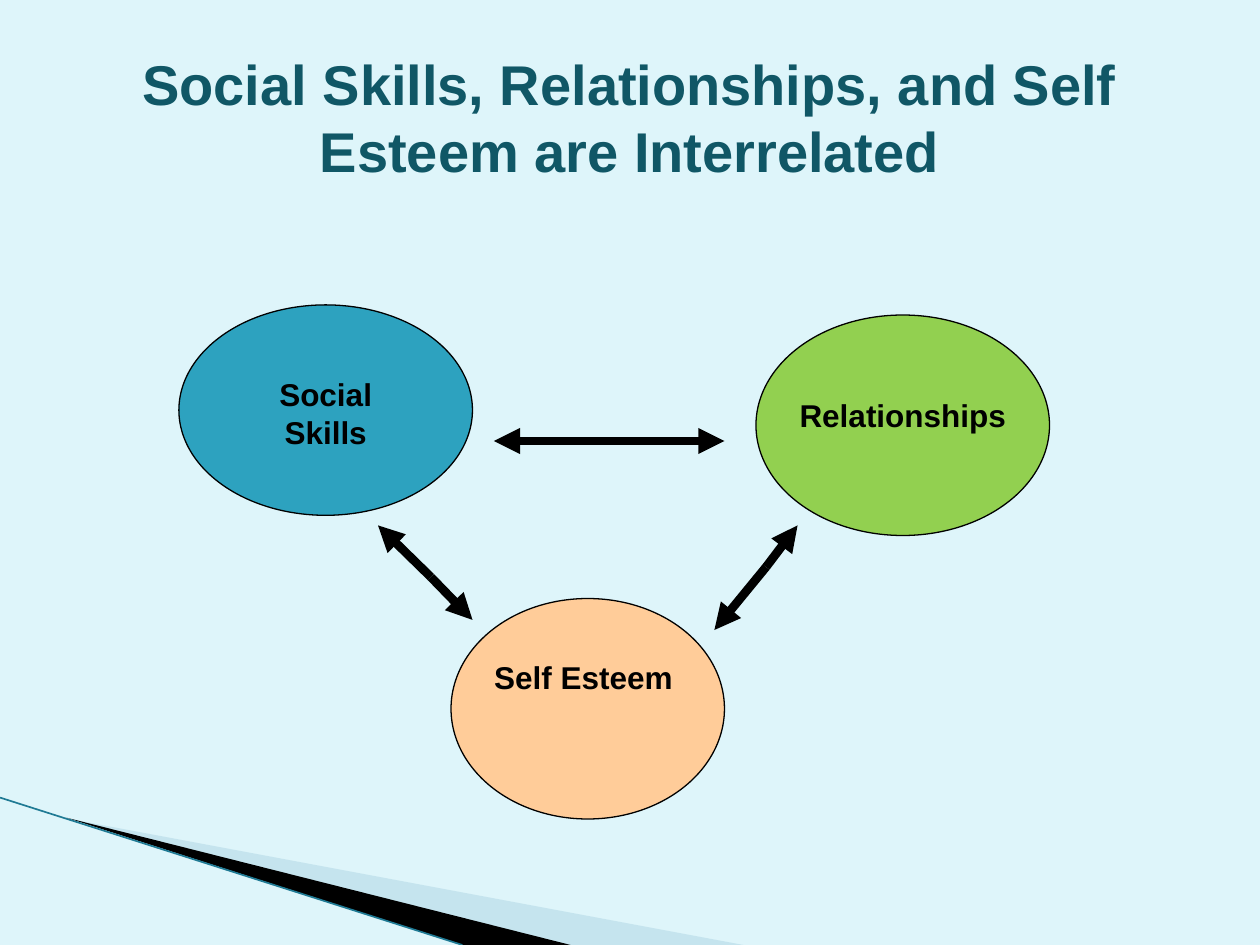
from typing import NamedTuple

import pptx
import pptx.dml.color
import pptx.enum.shapes
import pptx.enum.text
import pptx.oxml.ns
import pptx.oxml.xmlchemy
import pptx.util
from pptx.util import Inches

Point = tuple[float, float]
Box = tuple[float, float, float, float]


class Concept(NamedTuple):
    lines: list[str]
    fill: str
    oval: Box
    label: Box


class Link(NamedTuple):
    middle: Point
    ends: tuple[Point, Point]


CONCEPTS = [
    Concept(["Social", "Skills"], "2DA2BF", (1.42, 2.42, 2.33, 1.67), (1.92, 2.92, 1.33, 0.71)),
    Concept(["Relationships"], "92D050", (6, 2.5, 2.33, 1.75), (6, 3.09, 2.33, 0.4)),
    Concept(["Self Esteem"], "FFCC99", (3.58, 4.75, 2.17, 1.75), (3.67, 5.17, 1.92, 0.4)),
]
LINKS = [
    Link((3.42, 4.58), ((3.75, 4.92), (3, 4.17))),
    Link((4.58, 3.5), ((5.75, 3.5), (3.92, 3.5))),
    Link((6.08, 4.5), ((5.67, 5), (6.33, 4.17))),
]


def color(value: str) -> pptx.dml.color.RGBColor:
    return pptx.dml.color.RGBColor.from_string(value)


def add_xml(parent, tag: str, **attributes: str) -> None:
    child = pptx.oxml.xmlchemy.OxmlElement(tag)
    for name, value in attributes.items():
        child.set(name, value)
    parent.append(child)


def add_text(s, box: Box, lines: list[str], size: float, ink: str) -> None:
    sp = s.shapes.add_textbox(*map(Inches, box))
    tf = sp.text_frame
    tf.word_wrap = True
    tf.vertical_anchor = pptx.enum.text.MSO_ANCHOR.MIDDLE
    tf.text = "\n".join(lines)
    for p in tf.paragraphs:
        p.alignment = pptx.enum.text.PP_ALIGN.CENTER
        for r in p.runs:
            r.font.name = "Arial"
            r.font.size = pptx.util.Pt(size)
            r.font.bold = True
            r.font.color.rgb = color(ink)


def add_oval(s, concept: Concept) -> None:
    sp = s.shapes.add_shape(pptx.enum.shapes.MSO_SHAPE.OVAL, *map(Inches, concept.oval))
    sp.shadow.inherit = False
    sp.fill.solid()
    sp.fill.fore_color.rgb = color(concept.fill)
    sp.line.color.rgb = color("000000")
    sp.line.width = pptx.util.Pt(0.75)


def add_line(s, start: Point, end: Point, ink: str, width: float, arrow: bool = False) -> None:
    line = s.shapes.add_connector(
        pptx.enum.shapes.MSO_CONNECTOR.STRAIGHT, *map(Inches, start + end)
    )
    line.line.color.rgb = color(ink)
    line.line.width = pptx.util.Pt(width)
    sp_pr = line._element.spPr
    if arrow:
        add_xml(sp_pr.find(pptx.oxml.ns.qn("a:ln")), "a:tailEnd", type="triangle")
    add_xml(sp_pr, "a:effectLst")


def add_wedge(s, points: list[Point], fill: str, opacity: int = 100) -> None:
    corners = [(Inches(x), Inches(y)) for x, y in points]
    builder = s.shapes.build_freeform(*corners[0])
    builder.add_line_segments(corners[1:], close=True)
    sp = builder.convert_to_shape()
    sp.shadow.inherit = False
    sp.fill.solid()
    sp.fill.fore_color.rgb = color(fill)
    sp.line.fill.background()
    if opacity < 100:
        rgb = sp._element.spPr.find(".//" + pptx.oxml.ns.qn("a:srgbClr"))
        add_xml(rgb, "a:alpha", val=str(opacity * 1000))


def main() -> None:
    prs = pptx.Presentation()
    prs.slide_width = Inches(10)
    prs.slide_height = Inches(7.5)
    s = prs.slides.add_slide(prs.slide_layouts[6])
    s.background.fill.solid()
    s.background.fill.fore_color.rgb = color("DEF5FA")

    add_wedge(s, [(0.55, 6.5), (5.9, 7.5), (4.52, 7.5)], "A0CBDC", 40)
    add_wedge(s, [(0.53, 6.49), (4.53, 7.5), (3.67, 7.5)], "000000")
    add_line(s, (0, 6.33), (3.67, 7.5), "1F7A94", 0.95)

    title = "Social Skills, Relationships, and Self Esteem are Interrelated"
    add_text(s, (0.5, 0.3, 9, 1.25), [title], 32, "105766")

    for concept in CONCEPTS:
        add_oval(s, concept)
    for link in LINKS:
        for end in link.ends:
            add_line(s, link.middle, end, "000000", 5, arrow=True)
    for concept in CONCEPTS:
        add_text(s, concept.label, concept.lines, 18, "000000")

    prs.save("out.pptx")


if __name__ == "__main__":
    main()
